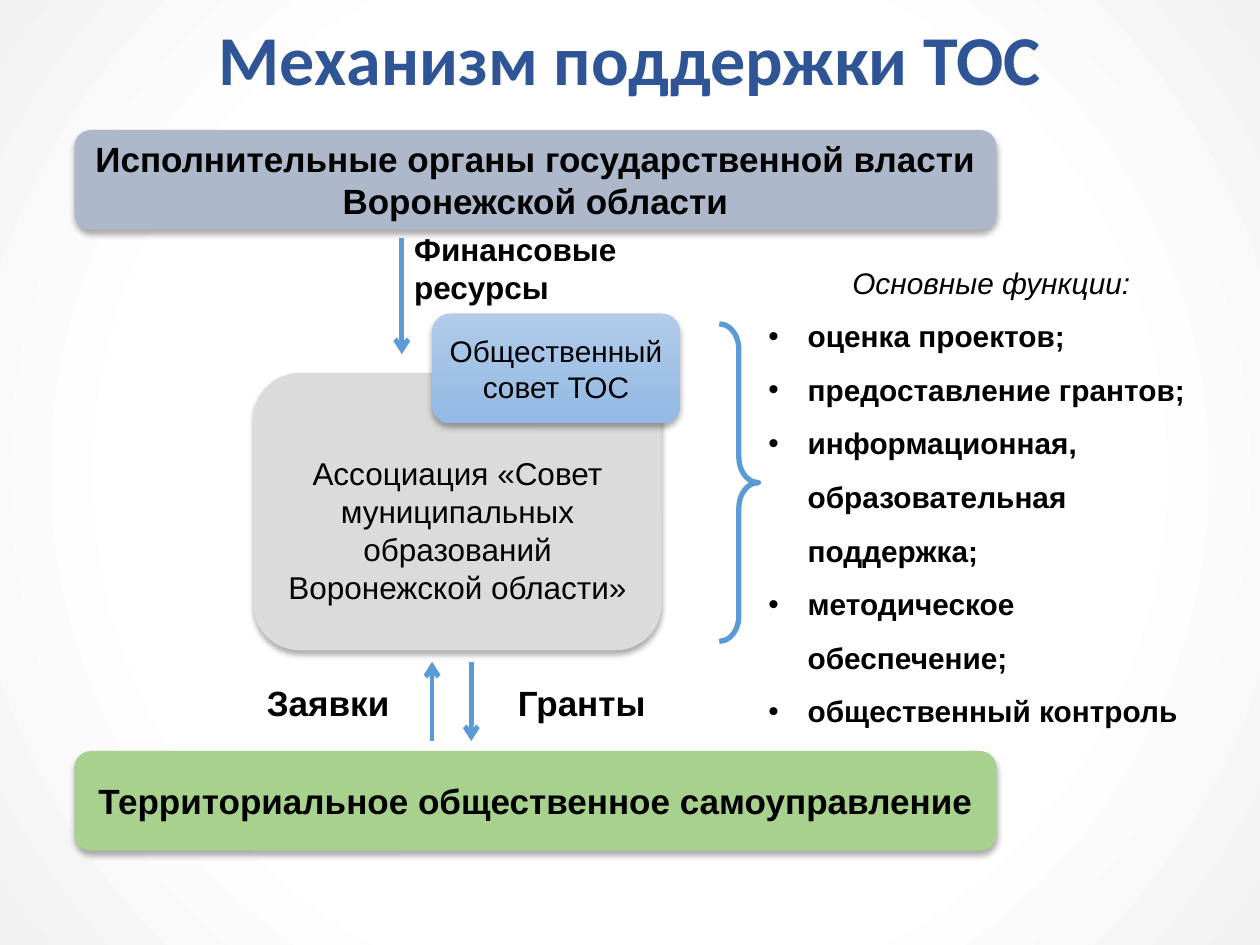
from typing import NamedTuple

from lxml.etree import SubElement
from pptx import Presentation
from pptx.dml.color import RGBColor
from pptx.enum.shapes import MSO_CONNECTOR as Link, MSO_SHAPE as Form
from pptx.enum.text import MSO_ANCHOR as Anchor, MSO_AUTO_SIZE as Fit, PP_ALIGN as Align
from pptx.oxml.ns import qn
from pptx.util import Cm, Pt

BLACK, BLUE = "000000", "5B9BD5"


class Box(NamedTuple):
    text: str
    area: tuple
    fills: tuple  # one colour is solid, two make a gradient
    size: int = 20
    bold: bool = True
    pads: tuple = (0.25, 0.13, 0.25, 0.13)


class Label(NamedTuple):
    text: str
    area: tuple
    size: int = 20
    align: Align = Align.LEFT


class Arrow(NamedTuple):
    x: float
    start: float
    end: float


BOXES = [
    Box("Территориальное общественное самоуправление",
        (1.5, 15.14, 18.59, 2.01), ("A9D18E",)),
    Box("Исполнительные органы государственной власти\nВоронежской области",
        (1.5, 2.62, 18.59, 2.01), ("ADB9CA",)),
    Box("Ассоциация «Совет муниципальных образований Воронежской области»",
        (5.11, 7.52, 8.23, 5.59), ("DBDBDB",), 18, False, (0.1, 0.83, 0.1, 0.1)),
    Box("Общественный совет ТОС",
        (8.71, 6.32, 5, 2.21), ("B1CBE9", "93B9E4"), 17, False, (0.1, 0.13, 0.1, 0.13)),
]
LABELS = [
    Label("Гранты", (10.19, 13.61, 3.4, 1.12)),
    Label("Заявки", (4.7, 13.61, 3.4, 1.12), align=Align.RIGHT),
    Label("Финансовые ресурсы", (8.1, 4.52, 7.14, 1.8), 18),
]
ARROWS = [Arrow(9.5, 13.34, 14.94), Arrow(8.71, 14.94, 13.34), Arrow(8.1, 4.8, 7.14)]
HEAD = "Основные функции:"
TASKS = [
    "оценка проектов;",
    "предоставление грантов;",
    "информационная, образовательная поддержка;",
    "методическое обеспечение;",
    "общественный контроль",
]


def rgb(code: str) -> RGBColor:
    return RGBColor.from_string(code)


def style(para, size: int, bold=False, italic=False, color=BLACK, face="Arial") -> None:
    for run in para.runs:
        font = run.font
        font.name, font.size = face, Pt(size)
        font.bold, font.italic = bold, italic
        font.color.rgb = rgb(color)


def blend(fill, colors: tuple, spots: tuple = (0, 1)) -> None:
    fill.gradient()
    for stop, color, spot in zip(fill.gradient_stops, colors, spots):
        stop.color.rgb, stop.position = rgb(color), spot


def pad(frame, pads: tuple) -> None:
    (frame.margin_left, frame.margin_top,
     frame.margin_right, frame.margin_bottom) = map(Cm, pads)


def place(shape, area: tuple) -> None:
    shape.left, shape.top, shape.width, shape.height = map(Cm, area)


def shade(shape) -> None:
    shape.shadow.inherit = False
    effects = shape.element.spPr.find(qn("a:effectLst"))
    drop = SubElement(effects, qn("a:outerShdw"), blurRad=str(Pt(3.5)),
                      dist=str(Pt(2.2)), dir="5400000", rotWithShape="0")
    tint = SubElement(drop, qn("a:srgbClr"), val=BLACK)
    SubElement(tint, qn("a:alpha"), val="32000")


def draw_box(slide, box: Box) -> None:
    shape = slide.shapes.add_shape(Form.ROUNDED_RECTANGLE, *map(Cm, box.area))
    if len(box.fills) > 1:
        blend(shape.fill, box.fills)
        shape.fill.gradient_angle = 270
    else:
        shape.fill.solid()
        shape.fill.fore_color.rgb = rgb(box.fills[0])
    shape.line.fill.background()
    shade(shape)
    frame = shape.text_frame
    frame.text, frame.word_wrap = box.text, True
    frame.vertical_anchor = Anchor.MIDDLE
    pad(frame, box.pads)
    for para in frame.paragraphs:
        para.alignment = Align.CENTER
        style(para, box.size, box.bold)


def draw_label(slide, label: Label) -> None:
    frame = slide.shapes.add_textbox(*map(Cm, label.area)).text_frame
    frame.text, frame.word_wrap = label.text, True
    para = frame.paragraphs[0]
    para.alignment = label.align
    style(para, label.size, True)


def draw_arrow(slide, arrow: Arrow) -> None:
    x = Cm(arrow.x)
    link = slide.shapes.add_connector(Link.STRAIGHT, x, Cm(arrow.start), x, Cm(arrow.end))
    link.line.color.rgb, link.line.width = rgb(BLUE), Pt(2.75)
    SubElement(link.line._get_or_add_ln(), qn("a:tailEnd"), type="arrow")
    SubElement(link.element.spPr, qn("a:effectLst"))


def draw_brace(slide) -> None:
    brace = slide.shapes.add_shape(Form.RIGHT_BRACE, *map(Cm, (14.5, 6.53, 0.79, 6.4)))
    brace.adjustments[0] = 0.65
    brace.fill.background()
    brace.line.color.rgb, brace.line.width = rgb(BLUE), Pt(3)
    brace.shadow.inherit = False


def fill_title(title) -> None:
    place(title, (0, 0.03, 25.4, 2.49))
    frame = title.text_frame
    frame.text = "Механизм поддержки ТОС"
    frame.auto_size, frame.vertical_anchor = Fit.NONE, Anchor.MIDDLE
    para = frame.paragraphs[0]
    para.alignment, para.line_spacing = Align.CENTER, 0.9
    style(para, 40, True, color="2F5597", face="Calibri")


def fill_list(body) -> None:
    place(body, (15.49, 5.33, 8.99, 9.45))
    frame = body.text_frame
    frame.text = "\n".join([HEAD, *TASKS])
    frame.auto_size, frame.vertical_anchor = Fit.NONE, Anchor.TOP
    pad(frame, (0, 0, 0, 0))
    head, *tasks = frame.paragraphs
    props = head._p.get_or_add_pPr()
    props.set("marL", "0")
    props.set("indent", "0")
    SubElement(props, qn("a:buNone"))
    head.alignment, head.space_before = Align.CENTER, Pt(0)
    style(head, 17, italic=True)
    for task in tasks:
        props = task._p.get_or_add_pPr()
        props.set("marL", str(Cm(0.79)))
        props.set("indent", str(-Cm(0.79)))
        SubElement(props, qn("a:buFont"), typeface="Arial")
        SubElement(props, qn("a:buChar"), char="•")
        task.line_spacing, task.space_before = 1.5, Pt(0)
        style(task, 17, True)


def paint_back(slide) -> None:
    blend(slide.background.fill, ("FFFFFF", "F2F2F2"), (0.63, 1))
    grad = slide.element.find(".//" + qn("a:gradFill"))
    grad.remove(grad.find(qn("a:lin")))
    ring = SubElement(grad, qn("a:path"), path="circle")
    SubElement(ring, qn("a:fillToRect"), l="50000", t="50000", r="50000", b="50000")


def main() -> None:
    deck = Presentation()
    deck.slide_width, deck.slide_height = Cm(25.4), Cm(19.05)
    slide = deck.slides.add_slide(deck.slide_layouts[1])
    paint_back(slide)

    # Title and list of functions
    fill_title(slide.shapes.title)
    fill_list(slide.placeholders[1])

    # Scheme of support
    for box in BOXES:
        draw_box(slide, box)
    for label in LABELS:
        draw_label(slide, label)
    for arrow in ARROWS:
        draw_arrow(slide, arrow)
    draw_brace(slide)
    deck.save("out.pptx")


if __name__ == "__main__":
    main()
